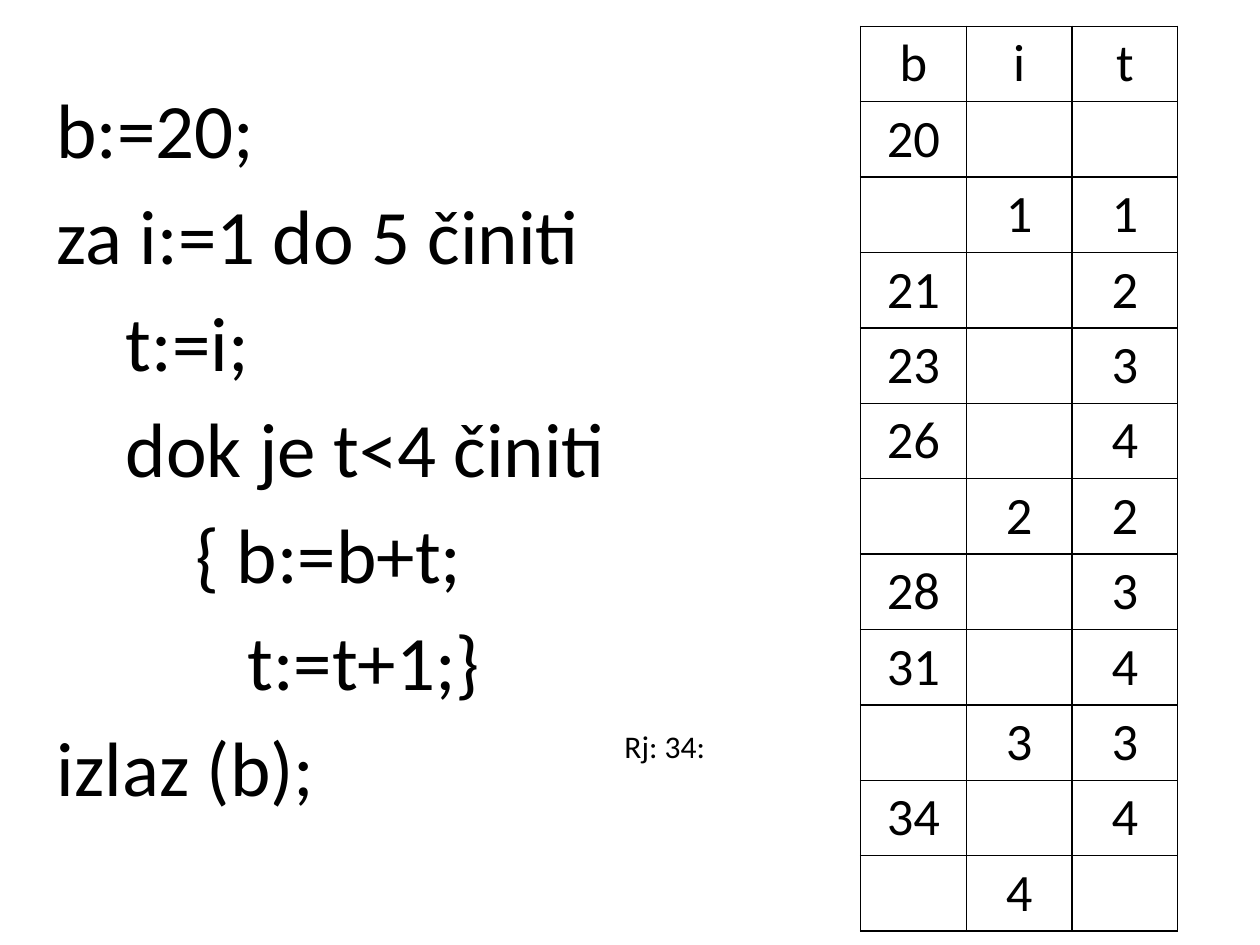
from lxml.etree import SubElement
from pptx import Presentation
from pptx.dml.color import RGBColor
from pptx.enum.text import MSO_ANCHOR as Anchor, PP_ALIGN as Align
from pptx.oxml.ns import qn
from pptx.util import Cm, Pt

COLORS = {"ink": "000000"}
FONT = "Calibri"

CODE = [
    (0, "b:=20;"),
    (0, "za i:=1 do 5 činiti"),
    (4, "t:=i;"),
    (4, "dok je t<4 činiti"),
    (8, "{ b:=b+t;"),
    (11, "t:=t+1;}"),
    (0, "izlaz (b);"),
]
ANSWER = "Rj: 34:"
TRACE = [
    ("b", "i", "t"),
    ("20", "", ""),
    ("", "1", "1"),
    ("21", "", "2"),
    ("23", "", "3"),
    ("26", "", "4"),
    ("", "2", "2"),
    ("28", "", "3"),
    ("31", "", "4"),
    ("", "3", "3"),
    ("34", "", "4"),
    ("", "4", ""),
]
INDENT_STEP = 0.35
COLUMN_WIDTH = 2.13
ROW_HEIGHT = 1.52


def write(paragraph, text, size):
    run = paragraph.add_run()
    run.text = text
    run.font.size = Pt(size)
    run.font.name = FONT
    run.font.color.rgb = RGBColor.from_string(COLORS["ink"])


def add_frame(slide, left, top, width, height):
    frame = slide.shapes.add_textbox(Cm(left), Cm(top), Cm(width), Cm(height)).text_frame
    frame.word_wrap = True
    return frame


def add_code(slide):
    frame = add_frame(slide, 0.89, 1.52, 22.86, 15.8)
    for number, (depth, line) in enumerate(CODE):
        paragraph = frame.add_paragraph() if number else frame.paragraphs[0]
        paragraph.space_before = Pt(8)
        paragraph._p.get_or_add_pPr().set("marL", str(Cm(depth * INDENT_STEP)))
        write(paragraph, line, 44)


def add_borders(cell):
    properties = cell._tc.get_or_add_tcPr()
    for position, side in enumerate(("lnL", "lnR", "lnT", "lnB")):
        border = properties.makeelement(qn(f"a:{side}"), {"w": str(Pt(1))})
        properties.insert(position, border)
        fill = SubElement(border, qn("a:solidFill"))
        SubElement(fill, qn("a:srgbClr"), val=COLORS["ink"])


def add_trace(slide):
    rows, columns = len(TRACE), len(TRACE[0])
    table = slide.shapes.add_table(
        rows, columns, Cm(17.35), Cm(0.53),
        Cm(columns * COLUMN_WIDTH), Cm(rows * ROW_HEIGHT),
    ).table
    table.first_row = table.horz_banding = False
    for column in table.columns:
        column.width = Cm(COLUMN_WIDTH)
    for row, values in zip(table.rows, TRACE):
        row.height = Cm(ROW_HEIGHT)
        for cell, value in zip(row.cells, values):
            cell.fill.background()
            cell.margin_top = cell.margin_bottom = 0
            cell.vertical_anchor = Anchor.MIDDLE
            add_borders(cell)
            if value:
                paragraph = cell.text_frame.paragraphs[0]
                paragraph.alignment = Align.CENTER
                write(paragraph, value, 30)


def main():
    deck = Presentation()
    deck.slide_width, deck.slide_height = Cm(25.4), Cm(19.05)
    slide = deck.slides.add_slide(deck.slide_layouts[6])
    add_code(slide)
    write(add_frame(slide, 12.34, 14.53, 3.99, 1.02).paragraphs[0], ANSWER, 18)
    add_trace(slide)
    deck.save("out.pptx")


if __name__ == "__main__":
    main()
